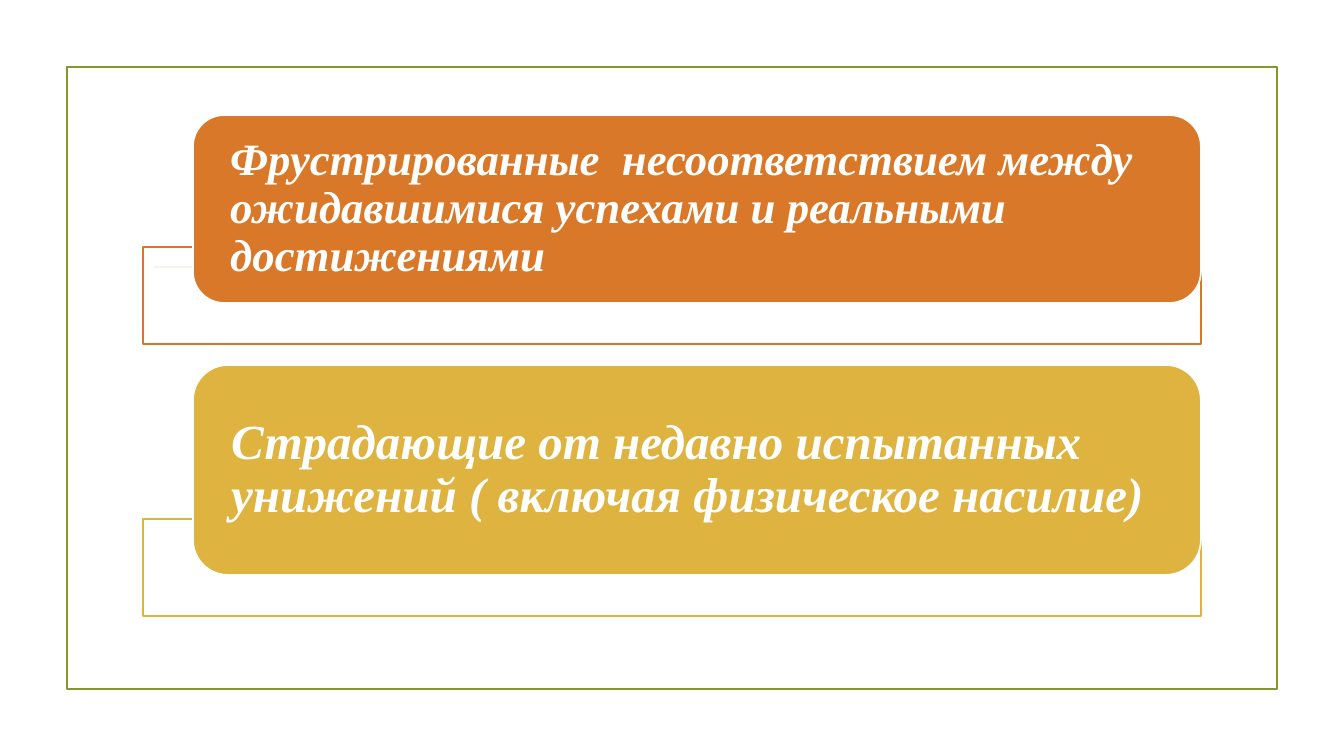
from dataclasses import dataclass

from lxml.etree import SubElement
from pptx import Presentation
from pptx.dml.color import RGBColor
from pptx.enum.shapes import MSO_CONNECTOR, MSO_SHAPE
from pptx.enum.text import MSO_ANCHOR, PP_ALIGN
from pptx.oxml.ns import qn
from pptx.util import Emu, Pt

EMU_PER_PX = 914400 / 100.8


@dataclass(frozen=True)
class Theme:
    green: str = "83992A"
    orange: str = "D97828"
    gold: str = "DEB340"
    white: str = "FFFFFF"
    font: str = "Times New Roman"
    line_width: float = 1.25
    first_size: int = 32
    second_size: int = 35


THEME = Theme()


def px(value):
    return Emu(round(value * EMU_PER_PX))


def color(value):
    return RGBColor.from_string(value)


def style_line(line, line_color):
    line.color.rgb = color(line_color)
    line.width = Pt(THEME.line_width)


def add_box(slide, kind, left, top, width, height, line_color, fill=None, opacity=100):
    shape = slide.shapes.add_shape(kind, px(left), px(top), px(width), px(height))
    shape.shadow.inherit = False
    style_line(shape.line, line_color)
    if fill is None:
        shape.fill.background()
        return shape
    shape.fill.solid()
    shape.fill.fore_color.rgb = color(fill)
    if opacity < 100:
        color_element = shape.fill._xPr.find(qn("a:solidFill"))[0]
        SubElement(color_element, qn("a:alpha"), val=str(opacity * 1000))
    return shape


def add_rule(slide, left, right, y, line_color):
    connector = slide.shapes.add_connector(
        MSO_CONNECTOR.STRAIGHT, px(left), px(y), px(right), px(y))
    style_line(connector.line, line_color)
    SubElement(connector._element.spPr, qn("a:effectLst"))


def set_text(shape, text, *, size, font_color=THEME.white, bold=True, italic=True,
             line_spacing=0.9, side_inset=28):
    frame = shape.text_frame
    frame.word_wrap = True
    frame.vertical_anchor = MSO_ANCHOR.MIDDLE
    frame.margin_left = frame.margin_right = px(side_inset)
    frame.margin_top = frame.margin_bottom = 0
    paragraph = frame.paragraphs[0]
    paragraph.alignment = PP_ALIGN.LEFT
    paragraph.line_spacing = line_spacing
    run = paragraph.add_run()
    run.text = text
    run.font.name = THEME.font
    run.font.size = Pt(size)
    run.font.bold = bold
    run.font.italic = italic
    run.font.color.rgb = color(font_color)


def add_card(slide, text, *, top, height, accent, size):
    """Rounded card overlapping the outlined tray below it."""
    tray_top = top + height - 56
    add_box(slide, MSO_SHAPE.RECTANGLE, 143, tray_top, 1058, 97, accent,
            fill=THEME.white, opacity=90)
    card = add_box(slide, MSO_SHAPE.ROUNDED_RECTANGLE, 193, top, 1008, height,
                   THEME.white, fill=accent)
    set_text(card, text, size=size)


def main():
    presentation = Presentation()
    presentation.slide_width = px(1344)
    presentation.slide_height = px(756)
    slide = presentation.slides.add_slide(presentation.slide_layouts[6])

    add_box(slide, MSO_SHAPE.RECTANGLE, 67, 67, 1210, 622, THEME.green)
    add_rule(slide, 154, 1190, 267, THEME.green)
    add_card(slide, "Фрустрированные  несоответствием между ожидавшимися успехами "
             "и реальными достижениями",
             top=115, height=188, accent=THEME.orange, size=THEME.first_size)
    add_card(slide, "Страдающие от недавно испытанных унижений "
             "( включая физическое насилие)",
             top=365, height=210, accent=THEME.gold, size=THEME.second_size)

    presentation.save("out.pptx")


if __name__ == "__main__":
    main()
